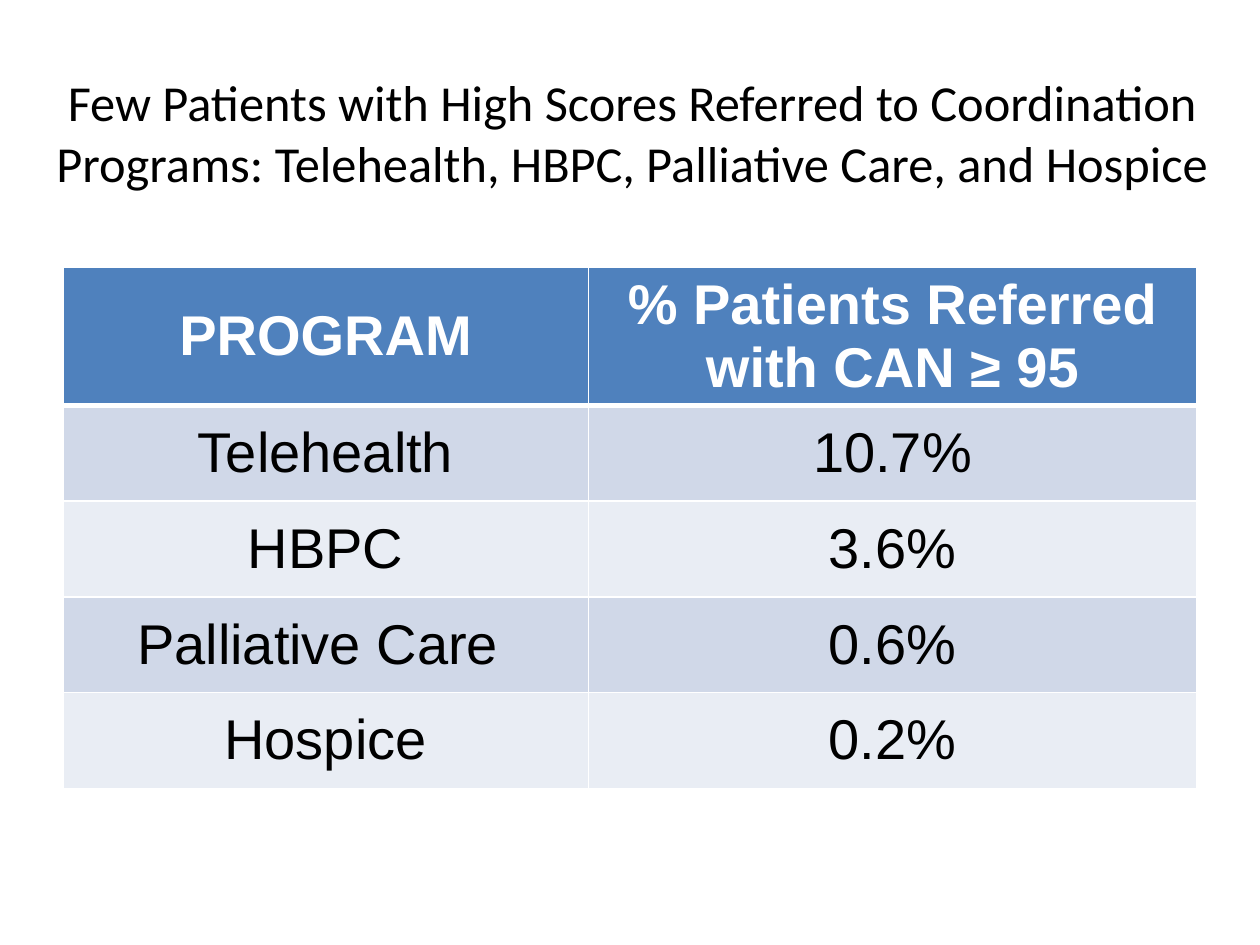
import pptx
import pptx.dml.color
import pptx.enum.text
import pptx.oxml
import pptx.oxml.ns
import pptx.util
from pptx.util import Inches

HEADER = ("PROGRAM", "% Patients Referred with CAN ≥ 95")
REFERRALS = (
    ("Telehealth", "10.7%"),
    ("HBPC", "3.6%"),
    ("Palliative Care ", "0.6%"),
    ("Hospice", "0.2%"),
)


def color(hex_code):
    return pptx.dml.color.RGBColor.from_string(hex_code)


class SlideBuilder:
    """Holds the style and the current slide, and adds its elements."""

    WHITE, BLACK = "FFFFFF", "000000"
    HEADER_FILL = "4F81BD"
    BANDS = ("D0D8E8", "E9EDF4")
    TITLE_FONT, TABLE_FONT = "Calibri", "Arial"
    TITLE_SIZE, TABLE_SIZE = 28.8, 32
    RULE, HEADER_RULE = 1, 3

    def __init__(self, presentation):
        self.slide = presentation.slides.add_slide(presentation.slide_layouts[6])

    def centered_text(self, frame, text, font, size, hex_code, bold=False):
        paragraph = frame.paragraphs[0]
        paragraph.alignment = pptx.enum.text.PP_ALIGN.CENTER
        run = paragraph.add_run()
        run.text = text
        run.font.name = font
        run.font.size = pptx.util.Pt(size)
        run.font.bold = bold
        run.font.color.rgb = color(hex_code)

    def title(self, text, left, top, width, height):
        frame = self.slide.shapes.add_textbox(left, top, width, height).text_frame
        frame.word_wrap = True
        frame.vertical_anchor = pptx.enum.text.MSO_ANCHOR.MIDDLE
        self.centered_text(frame, text, self.TITLE_FONT, self.TITLE_SIZE, self.BLACK)

    def borders(self, cell, top, bottom):
        properties = cell._tc.get_or_add_tcPr()
        sides = {"lnL": self.RULE, "lnR": self.RULE, "lnT": top, "lnB": bottom}
        for position, (side, points) in enumerate(sides.items()):
            line = pptx.oxml.parse_xml(
                f'<a:{side} {pptx.oxml.ns.nsdecls("a")} w="{pptx.util.Pt(points)}">'
                f'<a:solidFill><a:srgbClr val="{self.WHITE}"/></a:solidFill>'
                f"</a:{side}>"
            )
            properties.insert(position, line)

    def cell(self, cell, text, row):
        is_header = row == 0
        fill = self.HEADER_FILL if is_header else self.BANDS[(row - 1) % 2]
        cell.fill.solid()
        cell.fill.fore_color.rgb = color(fill)
        cell.vertical_anchor = pptx.enum.text.MSO_ANCHOR.MIDDLE
        self.borders(
            cell,
            top=self.HEADER_RULE if row == 1 else self.RULE,
            bottom=self.HEADER_RULE if is_header else self.RULE,
        )
        ink = self.WHITE if is_header else self.BLACK
        self.centered_text(
            cell.text_frame, text, self.TABLE_FONT, self.TABLE_SIZE, ink, is_header
        )

    def table(self, rows, left, top, widths, heights):
        table = self.slide.shapes.add_table(
            len(rows), len(widths), left, top, sum(widths), sum(heights)
        ).table
        for column, width in zip(table.columns, widths):
            column.width = width
        for index, (values, height) in enumerate(zip(rows, heights)):
            table.rows[index].height = height
            for column, text in enumerate(values):
                self.cell(table.cell(index, column), text, index)


def main():
    presentation = pptx.Presentation()
    presentation.slide_width = Inches(10)
    presentation.slide_height = Inches(7.5)

    builder = SlideBuilder(presentation)
    builder.table(
        (HEADER, *REFERRALS),
        Inches(0.5),
        Inches(2.12),
        widths=(Inches(4.17), Inches(4.83)),
        heights=(Inches(1.04), *[Inches(0.76)] * len(REFERRALS)),
    )
    builder.title(
        "Few Patients with High Scores Referred to Coordination Programs: "
        "Telehealth, HBPC, Palliative Care, and Hospice",
        Inches(0.31), Inches(0.42), Inches(9.42), Inches(1.25),
    )
    presentation.save("out.pptx")


if __name__ == "__main__":
    main()
